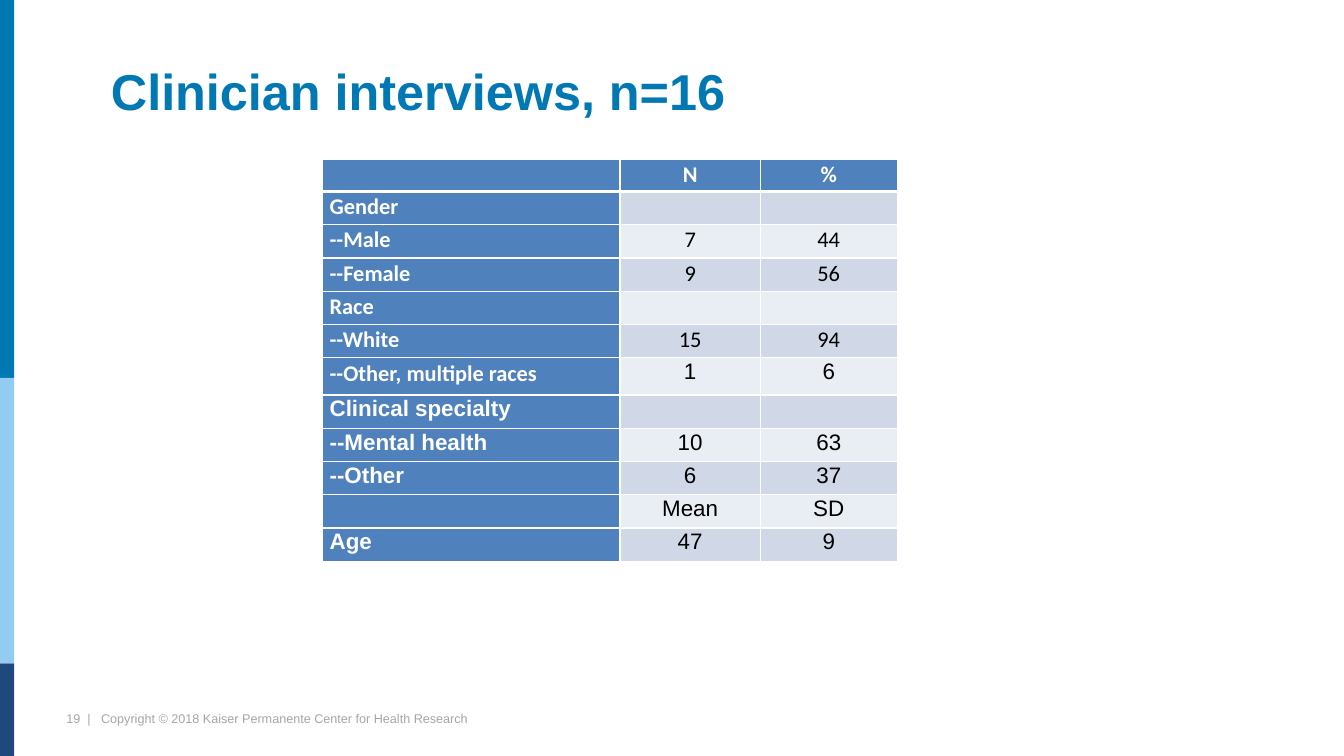
import pptx
import pptx.util
import pptx.dml.color
import pptx.enum.shapes
import pptx.enum.text
import lxml.etree
import pptx.oxml.ns

Inches = pptx.util.Inches
Pt = pptx.util.Pt
qn = pptx.oxml.ns.qn


def color(value):
    return pptx.dml.color.RGBColor.from_string(value)


def add_span(para, text, size, font, shade, bold=False):
    span = para.add_run()
    span.text = text
    span.font.size = Pt(size)
    span.font.name = font
    span.font.bold = bold
    span.font.color.rgb = color(shade)


deck = pptx.Presentation()
deck.slide_width = Inches(13.33)
deck.slide_height = Inches(7.5)
page = deck.slides.add_slide(deck.slide_layouts[5])

for top, height, shade in [(0, 3.75, "0078B3"), (6.58, 0.92, "1F497D"), (3.75, 2.83, "92CCF0")]:
    band = page.shapes.add_shape(
        pptx.enum.shapes.MSO_SHAPE.RECTANGLE, 0, Inches(top), Inches(0.14), Inches(height))
    band.shadow.inherit = False
    band.fill.solid()
    band.fill.fore_color.rgb = color(shade)
    band.line.fill.background()

title = page.shapes.title
title.left, title.top, title.width, title.height = Inches(1), Inches(0.25), Inches(11.67), Inches(1)
title.text_frame.auto_size = pptx.enum.text.MSO_AUTO_SIZE.NONE
title.text_frame.vertical_anchor = pptx.enum.text.MSO_ANCHOR.BOTTOM
para = title.text_frame.paragraphs[0]
para.alignment = pptx.enum.text.PP_ALIGN.LEFT
para.line_spacing = Pt(33)
add_span(para, "Clinician interviews, n=16", 36, "Arial", "0078B3", True)

footer = page.shapes.add_textbox(Inches(0.56), Inches(7), Inches(4.23), Inches(0.25))
footer.text_frame.word_wrap = False
footer.text_frame.auto_size = pptx.enum.text.MSO_AUTO_SIZE.SHAPE_TO_FIT_TEXT
footer_text = "19  |   Copyright © 2018 Kaiser Permanente Center for Health Research"
add_span(footer.text_frame.paragraphs[0], footer_text, 9, "Arial", "A6A6A6")

rows = [
    ("", "N", "%"),
    ("Gender", "", ""),
    ("--Male", "7", "44"),
    ("--Female", "9", "56"),
    ("Race", "", ""),
    ("--White", "15", "94"),
    ("--Other, multiple races", "1", "6"),
    ("Clinical specialty", "", ""),
    ("--Mental health", "10", "63"),
    ("--Other", "6", "37"),
    ("", "Mean", "SD"),
    ("Age", "47", "9"),
]
mixed_row = 6
frame = page.shapes.add_table(len(rows), 3, Inches(3.2), Inches(1.58), Inches(5.7), Inches(4.02))
table = frame.table
table.first_row = False
table.horz_banding = False
for column, width in zip(table.columns, [2.95, 1.39, 1.36]):
    column.width = Inches(width)

for row_index, row in enumerate(rows):
    table.rows[row_index].height = Inches({0: 0.32, mixed_row: 0.37}.get(row_index, 0.33))
    for column_index, text in enumerate(row):
        cell = table.cell(row_index, column_index)
        cell.margin_left = cell.margin_right = Inches(0.07)
        cell.margin_top = cell.margin_bottom = 0
        heading = row_index == 0 or column_index == 0

        properties = cell._tc.get_or_add_tcPr()
        for side in ["lnL", "lnR", "lnT", "lnB"]:
            thick = (row_index, side) in [(0, "lnB"), (1, "lnT")]
            border = lxml.etree.SubElement(properties, qn("a:" + side), w=str(Pt(3 if thick else 1)))
            fill = lxml.etree.SubElement(border, qn("a:solidFill"))
            lxml.etree.SubElement(fill, qn("a:srgbClr"), val="FFFFFF")
        cell.fill.solid()
        cell.fill.fore_color.rgb = color(
            "4F81BD" if heading else "D0D8E8" if row_index % 2 else "E9EDF4")

        if text:
            para = cell.text_frame.paragraphs[0]
            para.line_spacing = 1.07
            if column_index:
                para.alignment = pptx.enum.text.PP_ALIGN.CENTER
            calibri = row_index < mixed_row or (row_index == mixed_row and column_index == 0)
            add_span(para, text, 16, "Calibri" if calibri else "Arial",
                     "FFFFFF" if heading else "000000", heading)

deck.save("out.pptx")
